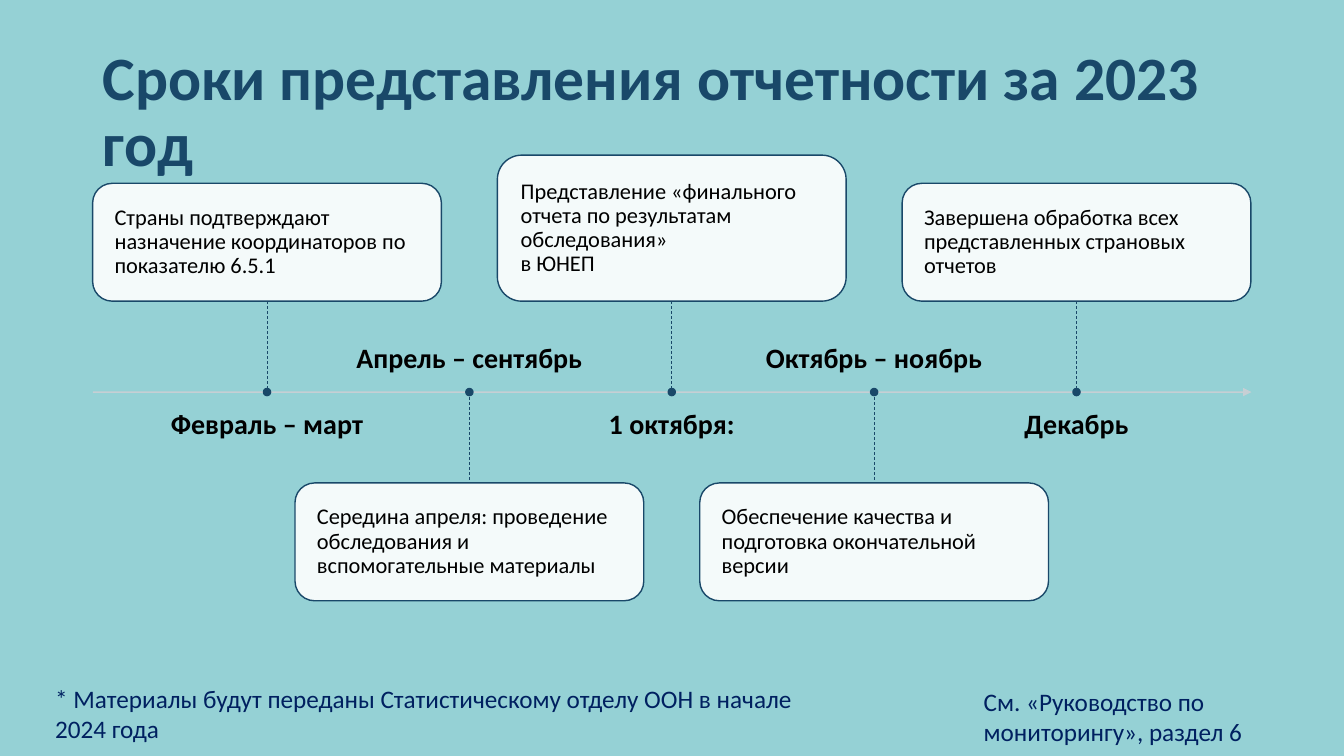
from lxml import etree
from pptx import Presentation
from pptx.dml.color import RGBColor
from pptx.enum.dml import MSO_LINE
from pptx.enum.shapes import MSO_CONNECTOR, MSO_SHAPE
from pptx.enum.text import MSO_ANCHOR, PP_ALIGN
from pptx.oxml.ns import qn
from pptx.util import Cm, Pt

STRAIGHT = MSO_CONNECTOR.STRAIGHT
ROUNDED, OVAL = MSO_SHAPE.ROUNDED_RECTANGLE, MSO_SHAPE.OVAL
TOP, MIDDLE, BOTTOM = MSO_ANCHOR.TOP, MSO_ANCHOR.MIDDLE, MSO_ANCHOR.BOTTOM
LEFT, CENTER = PP_ALIGN.LEFT, PP_ALIGN.CENTER
DASH = MSO_LINE.DASH

TEAL = RGBColor(0x95, 0xD1, 0xD5)
BLUE = RGBColor(0x19, 0x48, 0x69)
NAVY = RGBColor(0x00, 0x20, 0x60)
GREY = RGBColor(0xCC, 0xCF, 0xD4)
WHITE = RGBColor(0xFF, 0xFF, 0xFF)
BLACK = RGBColor(0x00, 0x00, 0x00)

AXIS_LEFT, AXIS_RIGHT, AXIS_Y = 2.34, 31.54, 9.88
FIRST_X, STEP = 6.73, 5.1
CARD_WIDTH, STEM = 8.79, 2.29
LABEL_WIDTH, LABEL_HEIGHT, LABEL_GAP = 7.72, 1.37, 0.45
DOT = 0.18

# Date, card text, card height in cm; cards alternate above and below the axis.
MILESTONES = [
    ("Февраль – март",
     "Страны подтверждают \vназначение координаторов по показателю 6.5.1", 2.97),
    ("Апрель – сентябрь",
     "Середина апреля: проведение обследования и вспомогательные материалы", 2.97),
    ("1 октября:",
     "Представление «финального отчета по результатам обследования» \vв ЮНЕП", 3.68),
    ("Октябрь – ноябрь",
     "Обеспечение качества и подготовка окончательной версии", 2.97),
    ("Декабрь",
     "Завершена обработка всех представленных страновых отчетов", 2.97),
]


def write_text(shape, text, size=16, color=BLACK, bold=False, align=LEFT,
               anchor=TOP, spacing=0.9, margins=(0.25, 0.13)):
    frame = shape.text_frame
    frame.word_wrap = True
    frame.vertical_anchor = anchor
    frame.margin_left = frame.margin_right = Cm(margins[0])
    frame.margin_top = frame.margin_bottom = Cm(margins[1])
    paragraph = frame.paragraphs[0]
    paragraph.text = text
    paragraph.alignment = align
    paragraph.line_spacing = spacing
    font = paragraph.font
    font.name, font.size, font.bold = "Calibri", Pt(size), bold
    font.color.rgb = color


def set_opacity(fill, percent):
    color = fill._xPr.find(qn("a:solidFill"))[0]
    etree.SubElement(color, qn("a:alpha"), val=str(percent * 1000))


class TimelineSlide:
    def __init__(self, presentation):
        self.slide = presentation.slides.add_slide(presentation.slide_layouts[6])
        self.shapes = self.slide.shapes
        background = self.slide.background.fill
        background.solid()
        background.fore_color.rgb = TEAL

    def text(self, left, top, width, height, text, **text_format):
        box = self.shapes.add_textbox(Cm(left), Cm(top), Cm(width), Cm(height))
        write_text(box, text, **text_format)

    def shape(self, kind, left, top, width, height, color):
        shape = self.shapes.add_shape(kind, Cm(left), Cm(top), Cm(width), Cm(height))
        shape.shadow.inherit = False
        shape.fill.solid()
        shape.fill.fore_color.rgb = color
        shape.line.color.rgb = BLUE
        shape.line.width = Pt(1)
        return shape

    def card(self, left, top, height, text):
        card = self.shape(ROUNDED, left, top, CARD_WIDTH, height, WHITE)
        set_opacity(card.fill, 90)
        write_text(card, text, anchor=MIDDLE, margins=(0.41, 0.41))

    def line(self, start, end, color, width):
        connector = self.shapes.add_connector(STRAIGHT, *map(Cm, start + end))
        connector.line.color.rgb = color
        connector.line.width = Pt(width)
        etree.SubElement(connector._element.spPr, qn("a:effectLst"))
        return connector.line

    def axis(self):
        line = self.line((AXIS_LEFT, AXIS_Y), (AXIS_RIGHT, AXIS_Y), GREY, 1)
        set_opacity(line.fill, 90)
        etree.SubElement(line._get_or_add_ln(), qn("a:tailEnd"), type="triangle")

    def milestone(self, x, above, date, text, height):
        """Card on one side of the axis, its date on the other."""
        if above:
            card_edge = AXIS_Y - STEM
            card_top = card_edge - height
            label_top, anchor = AXIS_Y + LABEL_GAP, TOP
        else:
            card_top = card_edge = AXIS_Y + STEM
            label_top, anchor = AXIS_Y - LABEL_GAP - LABEL_HEIGHT, BOTTOM
        self.text(x - LABEL_WIDTH / 2, label_top, LABEL_WIDTH, LABEL_HEIGHT, date,
                  size=20, bold=True, align=CENTER, anchor=anchor, margins=(0, 0))
        self.card(x - CARD_WIDTH / 2, card_top, height, text)
        stem = self.line((x, min(card_edge, AXIS_Y)), (x, max(card_edge, AXIS_Y)),
                         BLUE, 0.5)
        stem.dash_style = DASH
        self.shape(OVAL, x - DOT / 2, AXIS_Y - DOT / 2, DOT, DOT, BLUE)


def main():
    presentation = Presentation()
    presentation.slide_width, presentation.slide_height = Cm(33.87), Cm(19.05)
    timeline = TimelineSlide(presentation)
    timeline.text(2.34, 1.02, 29.21, 3.68, "Сроки представления отчетности за 2023 год",
                  size=44, color=BLUE, bold=True, anchor=MIDDLE)
    footnote = {"size": 18, "color": NAVY, "spacing": 1.0}
    timeline.text(1.14, 17.09, 20.07, 1.8,
                  "* Материалы будут переданы Статистическому отделу ООН в начале 2024 года",
                  **footnote)
    timeline.text(24.54, 17.17, 8.79, 1.8,
                  "См. «Руководство по мониторингу», раздел 6", **footnote)
    timeline.axis()
    for index, (date, text, height) in enumerate(MILESTONES):
        timeline.milestone(FIRST_X + index * STEP, index % 2 == 0, date, text, height)
    presentation.save("out.pptx")


if __name__ == "__main__":
    main()
